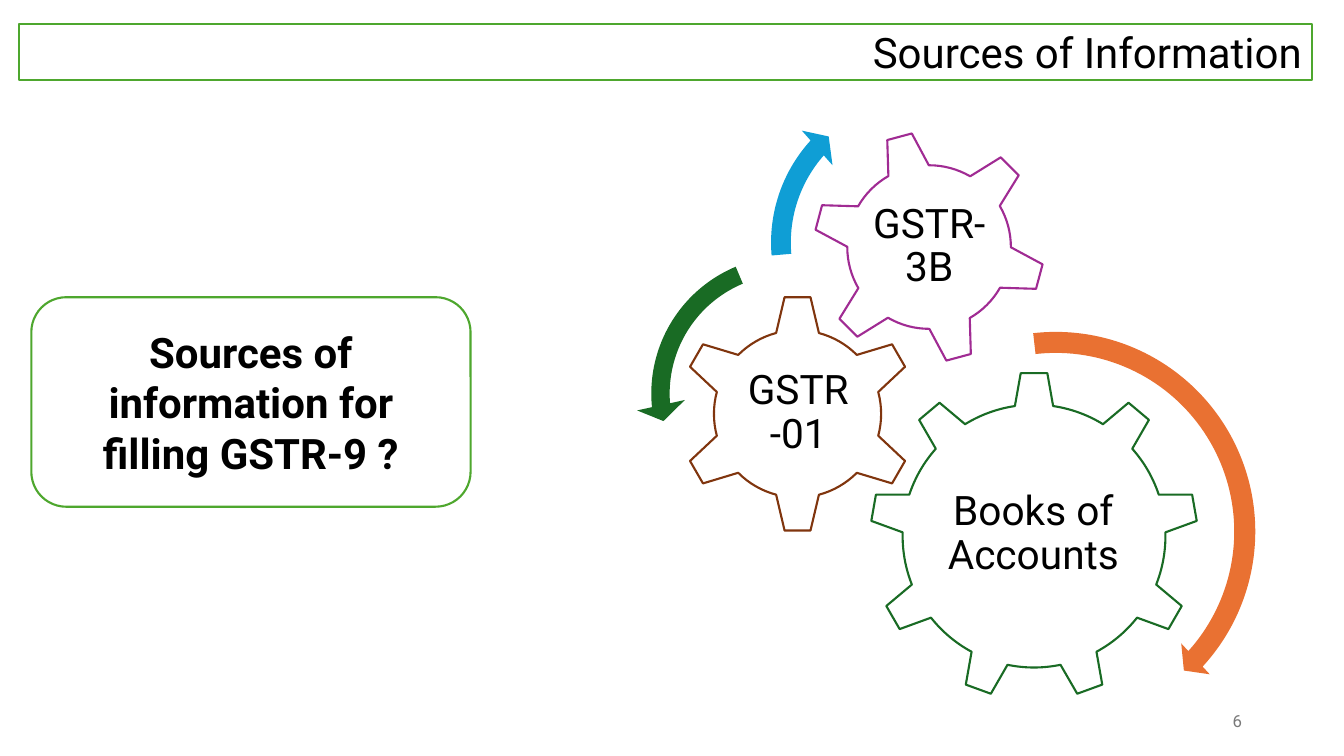
"""Build a slide of gears showing the sources of information for GSTR-9."""
from dataclasses import dataclass

import pptx
import pptx.dml.color
import pptx.enum.shapes
import pptx.enum.text
import pptx.oxml
import pptx.oxml.ns
import pptx.util

Cm = pptx.util.Cm
Pt = pptx.util.Pt
MSO_SHAPE = pptx.enum.shapes.MSO_SHAPE
PP_ALIGN = pptx.enum.text.PP_ALIGN


@dataclass(frozen=True)
class Theme:
    font: str = "Roboto"
    heading: int = 30
    gear_label: int = 29
    page_number: int = 12
    outline: float = 1.5
    text: str = "000000"
    muted: str = "797979"
    surface: str = "FFFFFF"
    frame: str = "4EA72E"
    green: str = "196B24"
    brown: str = "80350E"
    purple: str = "A02B93"
    orange: str = "E97132"
    blue: str = "0F9ED5"


THEME = Theme()


def rgb(value):
    return pptx.dml.color.RGBColor.from_string(value)


def place(sp, box):
    sp.left, sp.top, sp.width, sp.height = (Cm(v) for v in box)


def paint(sp, fill, line=None):
    sp.fill.solid()
    sp.fill.fore_color.rgb = rgb(fill)
    if line:
        sp.line.color.rgb = rgb(line)
        sp.line.width = Pt(THEME.outline)
    else:
        sp.line.fill.background()


def write(sp, text, size, align, color=THEME.text, bold=False):
    tf = sp.text_frame
    tf.word_wrap = True
    tf.auto_size = pptx.enum.text.MSO_AUTO_SIZE.NONE
    tf.vertical_anchor = pptx.enum.text.MSO_ANCHOR.MIDDLE
    p = tf.paragraphs[0]
    p.alignment = align
    r = p.add_run()
    r.text = text
    r.font.name = THEME.font
    r.font.size = Pt(size)
    r.font.bold = bold
    r.font.color.rgb = rgb(color)
    return tf


def add_preset(s, preset, box, fill, line=None):
    sp = s.shapes.add_shape(preset, *(Cm(v) for v in box))
    sp.shadow.inherit = False
    paint(sp, fill, line)
    return sp


def add_title(s, text, box):
    sp = s.shapes.title
    place(sp, box)
    ns = pptx.oxml.ns.nsdecls("a")
    geometry = f'<a:prstGeom {ns} prst="roundRect"><a:avLst/></a:prstGeom>'
    sp._element.spPr.append(pptx.oxml.parse_xml(geometry))
    paint(sp, THEME.surface, THEME.frame)
    write(sp, text, THEME.heading, PP_ALIGN.RIGHT)


def add_label(s, box, text, size, align, color=THEME.text):
    sp = s.shapes.add_textbox(*(Cm(v) for v in box))
    return write(sp, text, size, align, color)


def add_gear(s, preset, left, top, size, color, label, label_box, rotation=0):
    sp = add_preset(s, preset, (left, top, size, size), THEME.surface, color)
    sp.rotation = rotation
    tf = add_label(s, label_box, label, THEME.gear_label, PP_ALIGN.CENTER)
    tf.margin_left = tf.margin_right = Cm(0.1)
    tf.margin_top = tf.margin_bottom = Cm(0.1)
    tf.paragraphs[0].line_spacing = 0.9


def add_arc_arrow(s, preset, left, top, size, color, adjustments):
    sp = add_preset(s, preset, (left, top, size, size), color)
    for i, value in enumerate(adjustments):
        sp.adjustments[i] = value


def add_question(s, text, box):
    sp = add_preset(s, MSO_SHAPE.ROUNDED_RECTANGLE, box, THEME.surface, THEME.frame)
    write(sp, text, THEME.heading, PP_ALIGN.CENTER, bold=True)


def main():
    prs = pptx.Presentation()
    prs.slide_width, prs.slide_height = Cm(33.87), Cm(19.05)
    s = prs.slides.add_slide(prs.slide_layouts.get_by_name("Title Only"))

    add_title(s, "Sources of Information", (0.48, 0.61, 32.59, 1.4))
    add_label(s, (23.93, 17.65, 7.62, 1.02), "6", THEME.page_number,
              PP_ALIGN.RIGHT, THEME.muted)

    add_gear(s, MSO_SHAPE.GEAR_9, 21.92, 9.37, 8.28, THEME.green,
             "Books of Accounts", (23.57, 11.33, 4.95, 4.27))
    add_gear(s, MSO_SHAPE.GEAR_6, 17.09, 7.42, 6.02, THEME.brown,
             "GSTR-01", (18.62, 8.94, 3, 2.97))
    add_gear(s, MSO_SHAPE.GEAR_6, 20.47, 3.28, 5.89, THEME.purple,
             "GSTR-3B", (21.77, 4.57, 3.3, 3.3), rotation=345)

    add_arc_arrow(s, MSO_SHAPE.CIRCULAR_ARROW, 21.31, 8.1, 10.59, THEME.orange,
                  (0.05, 2.99, 25.39, 158.12, 0.05))
    add_arc_arrow(s, MSO_SHAPE.LEFT_CIRCULAR_ARROW, 16.03, 6.07, 7.7, THEME.green,
                  (0.06, 4.3, 104.89, 148.38, 0.08))
    add_arc_arrow(s, MSO_SHAPE.CIRCULAR_ARROW, 19.1, 1.96, 8.31, THEME.blue,
                  (0.06, 3.94, 133.14, 105.08, 0.07))

    add_question(s, "Sources of information for filling GSTR-9 ?",
                 (0.79, 7.49, 11.07, 5.28))
    prs.save("out.pptx")


if __name__ == "__main__":
    main()
